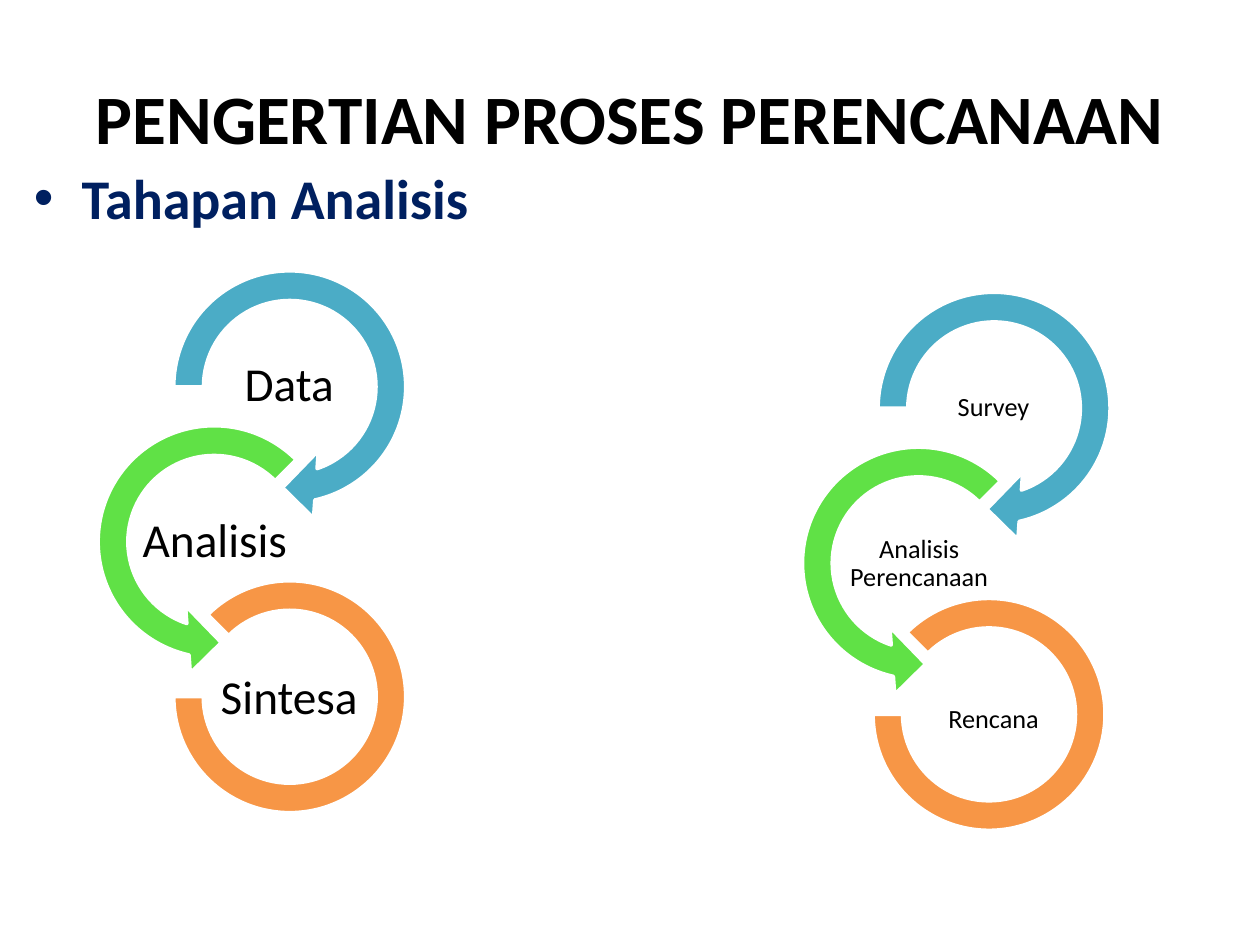
from lxml import etree
from pptx import Presentation
from pptx.dml.color import RGBColor
from pptx.enum.shapes import MSO_SHAPE
from pptx.enum.text import MSO_ANCHOR, MSO_AUTO_SIZE, PP_ALIGN
from pptx.oxml.ns import qn
from pptx.util import Inches, Pt

CENTER, JUSTIFY = PP_ALIGN.CENTER, PP_ALIGN.JUSTIFY
TOP, MIDDLE = MSO_ANCHOR.TOP, MSO_ANCHOR.MIDDLE
FONT = "Calibri"
TITLE = "PENGERTIAN PROSES PERENCANAAN"
SUBTITLE = "Tahapan Analisis"

# Top-left corner of each cycle, and the shift of its last ring.
CYCLES = [
    {"labels": ["Data", "Analisis", "Sintesa"], "size": 27, "inset": 0.02,
     "corner": (0.63, 2), "last_shift": (0, 0)},
    {"labels": ["Survey", "Analisis Perencanaan", "Rencana"], "size": 15, "inset": 0.01,
     "corner": (6.22, 2.17), "last_shift": (-0.04, -0.03)},
]
# Ring shape, adjustments, colour, diameter, ring offset and label offset in the cycle.
RINGS = [
    (MSO_SHAPE.CIRCULAR_ARROW, (0.11, 11.423, 45, 108, 0.125), "4BACC6",
     2.14, (0.6, 0), (1.07, 0.77)),
    (MSO_SHAPE.LEFT_CIRCULAR_ARROW, (0.11, 11.423, 63, 189, 0.125), "60E146",
     2.14, (0, 1.23), (0.48, 2.01)),
    (MSO_SHAPE.BLOCK_ARC, (135, 108, 0.127), "F79646",
     1.84, (0.75, 2.61), (1.07, 3.25)),
]
LABEL_SIZE = (1.19, 0.59)


def color(value):
    return RGBColor.from_string(value)


def place(shape, left, top, width, height):
    shape.left, shape.top = Inches(left), Inches(top)
    shape.width, shape.height = Inches(width), Inches(height)


def write(shape, text, size, fill="000000", bold=False, align=CENTER, anchor=MIDDLE,
          inset=None, line_spacing=None, bullet_indent=None):
    frame = shape.text_frame
    frame.word_wrap = True
    frame.auto_size = MSO_AUTO_SIZE.NONE
    frame.vertical_anchor = anchor
    if inset is not None:
        frame.margin_left = frame.margin_right = Inches(inset)
        frame.margin_top = frame.margin_bottom = Inches(inset)
    frame.text = text
    paragraph = frame.paragraphs[0]
    paragraph.alignment = align
    if line_spacing:
        paragraph.line_spacing = line_spacing
    if bullet_indent:
        properties = paragraph._p.get_or_add_pPr()
        properties.set("marL", str(Inches(bullet_indent)))
        properties.set("indent", str(-Inches(bullet_indent)))
        etree.SubElement(properties, qn("a:buFont"), typeface="Arial")
        etree.SubElement(properties, qn("a:buChar"), char="•")
    font = paragraph.runs[0].font
    font.name, font.size, font.bold = FONT, Pt(size), bold
    font.color.rgb = color(fill)


def add_ring(group, kind, adjustments, fill, left, top, diameter):
    ring = group.shapes.add_shape(kind, *map(Inches, (left, top, diameter, diameter)))
    ring.shadow.inherit = False
    for index, value in enumerate(adjustments):
        ring.adjustments[index] = value
    ring.fill.solid()
    ring.fill.fore_color.rgb = color(fill)
    ring.line.color.rgb = color("FFFFFF")
    ring.line.width = Pt(2)


def add_cycle(slide, cycle):
    group = slide.shapes.add_group_shape()
    left, top = cycle["corner"]
    for label, ring in zip(cycle["labels"], RINGS):
        kind, adjustments, fill, diameter, (ring_x, ring_y), (label_x, label_y) = ring
        shift_x, shift_y = cycle["last_shift"] if ring is RINGS[-1] else (0, 0)
        add_ring(group, kind, adjustments, fill,
                 left + ring_x + shift_x, top + ring_y + shift_y, diameter)
        box = group.shapes.add_textbox(
            *map(Inches, (left + label_x, top + label_y, *LABEL_SIZE)))
        write(box, label, cycle["size"], inset=cycle["inset"], line_spacing=0.9)


def main():
    presentation = Presentation()
    presentation.slide_width, presentation.slide_height = Inches(10), Inches(7.5)
    slide = presentation.slides.add_slide(presentation.slide_layouts[5])

    title = slide.shapes.title
    place(title, 0.5, 0.3, 9, 1.25)
    write(title, TITLE, 39.6, bold=True)

    subtitle = slide.shapes.add_textbox(*map(Inches, (0.17, 1.25, 9.33, 4.95)))
    write(subtitle, SUBTITLE, 32, fill="002060", bold=True, align=JUSTIFY,
          anchor=TOP, bullet_indent=0.38)

    for cycle in CYCLES:
        add_cycle(slide, cycle)
    presentation.save("out.pptx")


if __name__ == "__main__":
    main()
